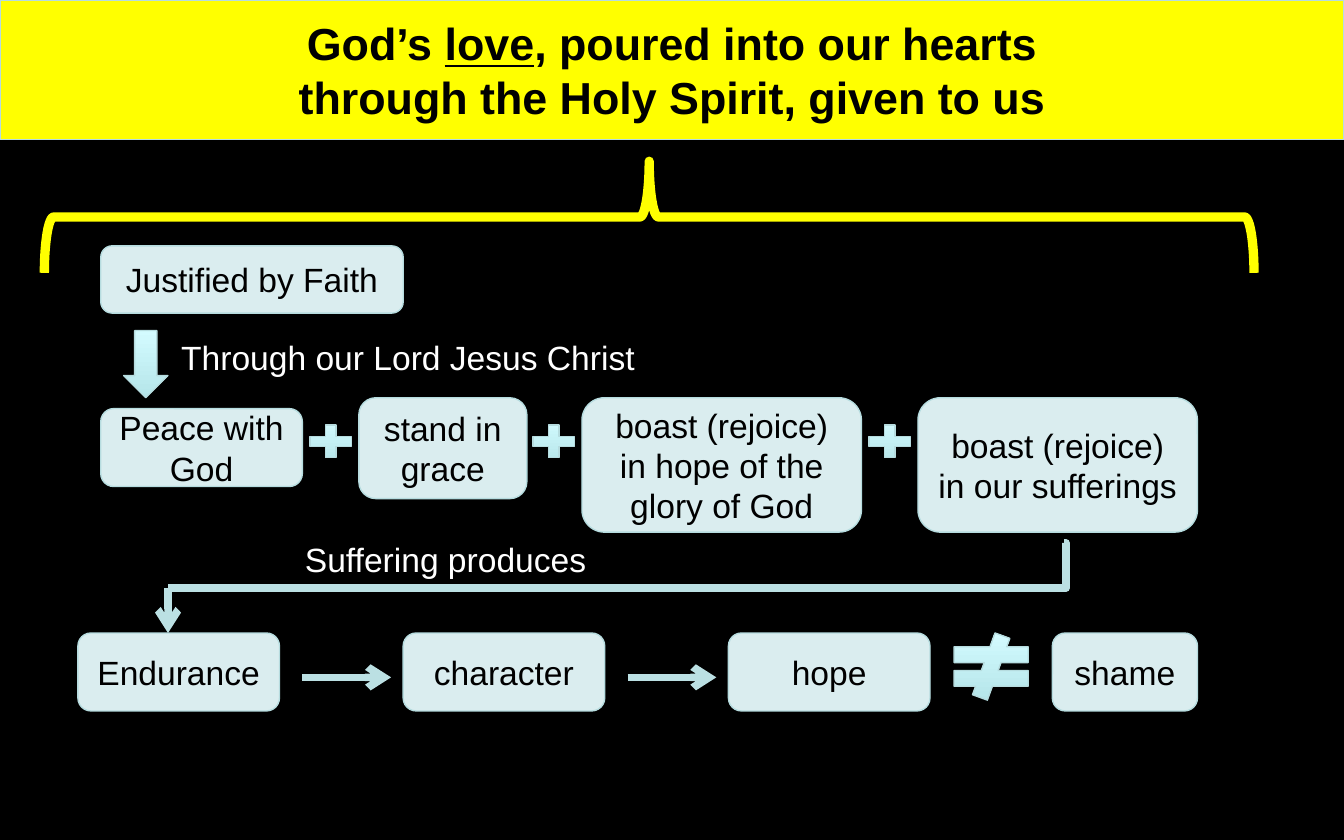
import pptx
import pptx.util
import pptx.dml.color
import pptx.enum.dml
import pptx.enum.shapes
import pptx.enum.text
import pptx.oxml
import pptx.oxml.ns
from lxml import etree

Inches = pptx.util.Inches
Kind = pptx.enum.shapes.MSO_SHAPE
Link = pptx.enum.shapes.MSO_CONNECTOR
Align = pptx.enum.text.PP_ALIGN
tag = pptx.oxml.ns.qn

HUES = {
    "black": "000000",
    "white": "FFFFFF",
    "yellow": "FFFF00",
    "pale": "DAEDEF",
    "edge": "B6DCDF",
    "wire": "BBE0E3",
    "deep": "B5E5E9",
    "light": "D3FBFF",
}


def hue(name):
    return pptx.dml.color.RGBColor.from_string(HUES[name])


def place(box):
    return [Inches(side) for side in box]


def outline(shape, name="edge", width=0.75):
    shape.line.color.rgb = hue(name)
    shape.line.width = pptx.util.Pt(width)


def paint(shape, name):
    shape.fill.solid()
    shape.fill.fore_color.rgb = hue(name)


def add_run(para, text, size, color, bold=False, under=False):
    run = para.add_run()
    run.text = text
    font = run.font
    font.name = "Arial"
    font.size = pptx.util.Pt(size)
    font.bold = bold
    font.underline = under
    font.color.rgb = hue(color)


def add_title(slide, box):
    title = slide.shapes.title
    title.left, title.top, title.width, title.height = place(box)
    geom = etree.Element(tag("a:prstGeom"), prst="flowChartAlternateProcess")
    etree.SubElement(geom, tag("a:avLst"))
    title.element.spPr.insert(1, geom)
    paint(title, "yellow")
    outline(title)
    frame = title.text_frame
    frame.auto_size = pptx.enum.text.MSO_AUTO_SIZE.NONE
    frame.vertical_anchor = pptx.enum.text.MSO_ANCHOR.MIDDLE
    lines = [
        [("God’s ", False), ("love", True), (", poured into our hearts", False)],
        [("through the Holy Spirit, given to us", False)],
    ]
    for row, parts in enumerate(lines):
        para = frame.add_paragraph() if row else frame.paragraphs[0]
        para.alignment = Align.CENTER
        para.space_before = pptx.util.Pt(0)
        for text, under in parts:
            add_run(para, text, 24, "black", True, under)


def add_card(slide, box, text):
    card = slide.shapes.add_shape(Kind.FLOWCHART_ALTERNATE_PROCESS, *place(box))
    card.shadow.inherit = False
    paint(card, "pale")
    outline(card)
    frame = card.text_frame
    frame.word_wrap = True
    frame.vertical_anchor = pptx.enum.text.MSO_ANCHOR.MIDDLE
    para = frame.paragraphs[0]
    para.alignment = Align.CENTER
    add_run(para, text, 18, "black")


def add_sign(slide, box, kind):
    sign = slide.shapes.add_shape(kind, *place(box))
    sign.shadow.inherit = False
    sign.fill.gradient()
    sign.fill.gradient_angle = 90
    for stop, name in zip(sign.fill.gradient_stops, ("deep", "light")):
        stop.color.rgb = hue(name)
    outline(sign)


def add_label(slide, box, text):
    label = slide.shapes.add_textbox(*place(box))
    label.text_frame.word_wrap = True
    add_run(label.text_frame.paragraphs[0], text, 18, "white")


def add_wire(slide, start, end, kind=Link.STRAIGHT, arrow=True):
    wire = slide.shapes.add_connector(kind, *place(start + end))
    outline(wire, "wire", 4)
    props = wire.element.spPr
    etree.SubElement(props, tag("a:effectLst"))
    if arrow:
        etree.SubElement(wire.line._get_or_add_ln(), tag("a:tailEnd"), type="arrow")
    return wire


def add_brace(slide, box):
    left, top, width, height = box
    turned = (left + (width - height) / 2, top + (height - width) / 2, height, width)
    brace = slide.shapes.add_shape(Kind.LEFT_BRACE, *place(turned))
    brace.rotation = 90
    brace.shadow.inherit = False
    brace.fill.background()
    outline(brace, "yellow", 5)


def add_faith(slide, box):
    left, top, width, height = box
    add_card(slide, (left, top, 2.25, 0.5), "Justified by Faith")
    add_sign(slide, (left + 0.17, top + 0.63, 0.33, 0.5), Kind.DOWN_ARROW)
    add_label(slide, (left + 0.5, top + 0.63, width - 0.5, 0.4), "Through our Lord Jesus Christ")


def add_gifts(slide, box):
    left, top, width, height = box
    cards = [
        (0, 0.08, 1.5, 0.58, "Peace with God"),
        (1.92, 0, 1.25, 0.75, "stand in grace"),
        (3.58, 0, 2.08, height, "boast (rejoice) in hope of the glory of God"),
        (6.08, 0, 2.08, height, "boast (rejoice) in our sufferings"),
    ]
    for shift, drop, wide, tall, text in cards:
        add_card(slide, (left + shift, top + drop, wide, tall), text)
        if shift:
            add_sign(slide, (left + shift - 0.42, top + 0.16, 0.42, 0.33), Kind.MATH_PLUS)


def add_turn(slide, box):
    left, top, width, height = box
    middle = top + height / 2
    bend = add_wire(slide, (left + width, top), (left, middle), Link.ELBOW, False)
    guides = bend.element.spPr.find(tag("a:prstGeom")).get_or_add_avLst()
    etree.SubElement(guides, tag("a:gd"), name="adj1", fmla="val -200")
    add_wire(slide, (left, middle), (left, top + height))
    add_label(slide, (left + 0.92, top - 0.08, 2.59, 0.4), "Suffering produces")


def add_chain(slide, box):
    left, top, width, height = box
    step = 2.42
    words = ["Endurance", "character", "hope"]
    for spot, word in enumerate(words):
        start = left + spot * step
        add_card(slide, (start, top, 1.5, height), word)
        if spot < len(words) - 1:
            add_wire(slide, (start + 1.67, top + 0.33), (start + 2.33, top + 0.33))
    add_sign(slide, (left + 6.42, top, 0.75, 0.5), Kind.MATH_NOT_EQUAL)
    add_card(slide, (left + width - 1.08, top, 1.08, height), "shame")


def main():
    deck = pptx.Presentation()
    deck.slide_width, deck.slide_height = Inches(10), Inches(6.25)
    slide = deck.slides.add_slide(deck.slide_layouts[5])
    slide.background.fill.solid()
    slide.background.fill.fore_color.rgb = hue("black")
    add_title(slide, (0, 0, 10, 1.04))
    add_brace(slide, (0.33, 1.2, 9, 0.83))
    add_faith(slide, (0.75, 1.83, 4.75, 1.13))
    add_gifts(slide, (0.75, 2.96, 8.16, 1))
    add_turn(slide, (1.25, 4.04, 6.67, 0.67))
    add_chain(slide, (0.58, 4.71, 8.33, 0.58))
    deck.save("out.pptx")


if __name__ == "__main__":
    main()
